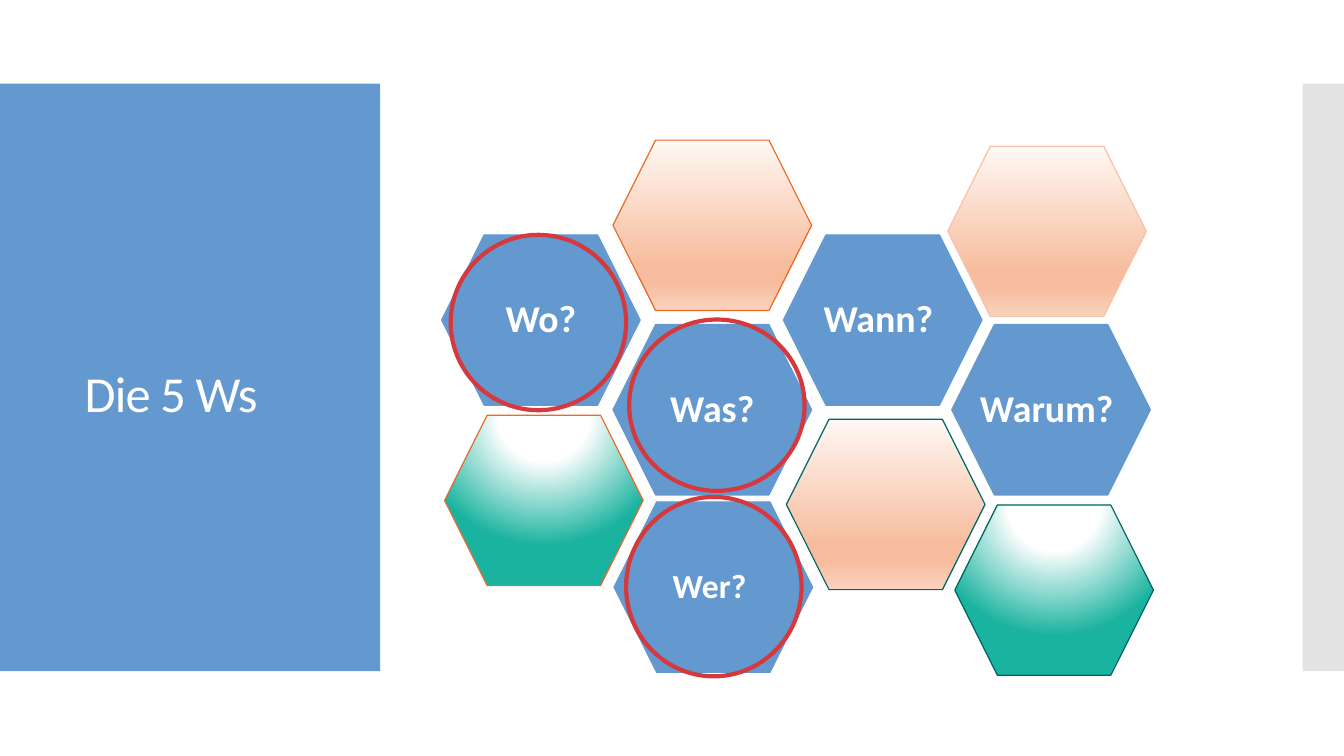
from dataclasses import dataclass

from lxml import etree
from pptx import Presentation
from pptx.dml.color import RGBColor
from pptx.enum.shapes import MSO_SHAPE
from pptx.enum.text import MSO_ANCHOR, PP_ALIGN
from pptx.oxml import parse_xml
from pptx.oxml.ns import nsdecls, qn
from pptx.shapes.autoshape import Shape
from pptx.slide import Slide
from pptx.util import Inches, Pt

RECT, HEXAGON, OVAL = MSO_SHAPE.RECTANGLE, MSO_SHAPE.HEXAGON, MSO_SHAPE.OVAL
MIDDLE, LEFT, CENTER = MSO_ANCHOR.MIDDLE, PP_ALIGN.LEFT, PP_ALIGN.CENTER


@dataclass(frozen=True)
class Theme:
    font: str = "Calibri"
    title_size: int = 36
    label_size: int = 27
    small_label_size: int = 24
    white: str = "FFFFFF"
    blue: str = "6499CF"
    grey: str = "C8C8C8"
    red: str = "D5393D"
    orange: str = "EE6926"
    peach: str = "F8C3A8"
    green: str = "006665"


@dataclass(frozen=True)
class Gradient:
    stops: tuple[tuple[int, str], ...]
    radial: bool = False


@dataclass(frozen=True)
class QuestionHex:
    left: float
    top: float
    label: str
    size: int


@dataclass(frozen=True)
class GradientHex:
    left: float
    top: float
    gradient: Gradient
    line: str


@dataclass(frozen=True)
class Ring:
    left: float
    top: float
    height: float


THEME = Theme()
HEX_W, HEX_H, HEX_LINE = 1.97, 1.69, 0.85
RING_W, RING_LINE = 1.74, 3

PEACH_FADE = Gradient(((0, "FEF8F4"), (74, "F7BC9D"), (83, "F7BC9D"), (100, "FAD2BE")))
GREEN_GLOW = Gradient(((0, "FFFFFF"), (35, "FFFFFF"), (100, "1AB39F")), radial=True)
DEEP_GREEN_GLOW = Gradient(
    ((0, "FFFFFF"), (35, "FFFFFF"), (63, "9CDED6"), (94, "2FBAA8"), (100, "1AB39F")),
    radial=True,
)

HEXAGONS = (
    QuestionHex(6.09, 4.98, "Wer? ", THEME.small_label_size),
    GradientHex(4.41, 4.12, GREEN_GLOW, THEME.orange),
    QuestionHex(6.08, 3.22, "Was?", THEME.label_size),
    GradientHex(7.8, 4.16, PEACH_FADE, THEME.green),
    QuestionHex(4.38, 2.33, "Wo?", THEME.label_size),
    GradientHex(6.08, 1.39, PEACH_FADE, THEME.orange),
    QuestionHex(7.77, 2.33, "Wann? ", THEME.label_size),
    GradientHex(9.47, 5.01, DEEP_GREEN_GLOW, THEME.green),
    QuestionHex(9.44, 3.22, "Warum? ", THEME.label_size),
    GradientHex(9.4, 1.45, PEACH_FADE, THEME.peach),
)
RINGS = (Ring(6.21, 4.93, 1.78), Ring(6.24, 3.17, 1.7), Ring(4.47, 2.33, 1.74))


def rgb(color: str) -> RGBColor:
    return RGBColor.from_string(color)


def add_shape(slide: Slide, kind: MSO_SHAPE, left: float, top: float,
              width: float, height: float) -> Shape:
    sp = slide.shapes.add_shape(
        kind, Inches(left), Inches(top), Inches(width), Inches(height))
    sp.shadow.inherit = False
    return sp


def fill_solid(sp: Shape, color: str) -> None:
    sp.fill.solid()
    sp.fill.fore_color.rgb = rgb(color)


def fill_gradient(sp: Shape, gradient: Gradient) -> None:
    stops = "".join(
        f'<a:gs pos="{pos * 1000}"><a:srgbClr val="{color}"/></a:gs>'
        for pos, color in gradient.stops)
    if gradient.radial:
        shade = ('<a:path path="circle">'
                 '<a:fillToRect l="50000" t="-80000" r="50000" b="180000"/></a:path>')
    else:
        shade = '<a:lin ang="5400000" scaled="0"/>'
    fill = parse_xml(
        f'<a:gradFill {nsdecls("a")} rotWithShape="1">'
        f'<a:gsLst>{stops}</a:gsLst>{shade}</a:gradFill>')
    sp._element.spPr.find(qn("a:prstGeom")).addnext(fill)


def set_line(sp: Shape, color: str, width: float) -> None:
    sp.line.color.rgb = rgb(color)
    sp.line.width = Pt(width)


def set_text(sp: Shape, text: str, size: int, align: PP_ALIGN, bold: bool) -> None:
    tf = sp.text_frame
    tf.text = text
    tf.vertical_anchor = MIDDLE
    p = tf.paragraphs[0]
    p.alignment = align
    p.line_spacing = 0.9
    p.font.name = THEME.font
    p.font.size = Pt(size)
    p.font.bold = bold
    p.font.color.rgb = rgb(THEME.white)


def add_side_panels(slide: Slide) -> None:
    for left, width, color in ((0, 3.77, THEME.blue), (12.92, 0.41, THEME.grey)):
        sp = add_shape(slide, RECT, left, 0.83, width, 5.83)
        fill_solid(sp, color)
        sp.line.fill.background()
    # The right-hand panel is half transparent
    color_node = sp._element.spPr.find(qn("a:solidFill"))[0]
    etree.SubElement(color_node, qn("a:alpha"), val="50000")


def place_title(slide: Slide) -> None:
    title = slide.shapes.title
    title.left, title.top = Inches(0.74), Inches(2.45)
    title.width, title.height = Inches(3.22), Inches(2.97)
    set_text(title, "Die 5 Ws", THEME.title_size, LEFT, bold=False)
    r = title.text_frame.paragraphs[0].runs[0]
    r._r.get_or_add_rPr().set("spc", "-60")
    # Bring the title in front of the panels
    slide.shapes._spTree.append(title._element)


def add_hexagon(slide: Slide, item: QuestionHex | GradientHex) -> None:
    sp = add_shape(slide, HEXAGON, item.left, item.top, HEX_W, HEX_H)
    if isinstance(item, GradientHex):
        fill_gradient(sp, item.gradient)
        set_line(sp, item.line, HEX_LINE)
        return
    fill_solid(sp, THEME.blue)
    set_line(sp, THEME.blue, HEX_LINE)
    set_text(sp, item.label, item.size, CENTER, bold=True)
    tf = sp.text_frame
    tf.word_wrap = False
    tf.margin_left = tf.margin_right = 0


def add_ring(slide: Slide, ring: Ring) -> None:
    sp = add_shape(slide, OVAL, ring.left, ring.top, RING_W, ring.height)
    sp.fill.background()
    set_line(sp, THEME.red, RING_LINE)


def main() -> None:
    prs = Presentation()
    prs.slide_width, prs.slide_height = Inches(13.33), Inches(7.5)
    slide = prs.slides.add_slide(prs.slide_layouts.get_by_name("Title Only"))
    add_side_panels(slide)
    place_title(slide)
    for item in HEXAGONS:
        add_hexagon(slide, item)
    for ring in RINGS:
        add_ring(slide, ring)
    prs.save("out.pptx")


if __name__ == "__main__":
    main()
